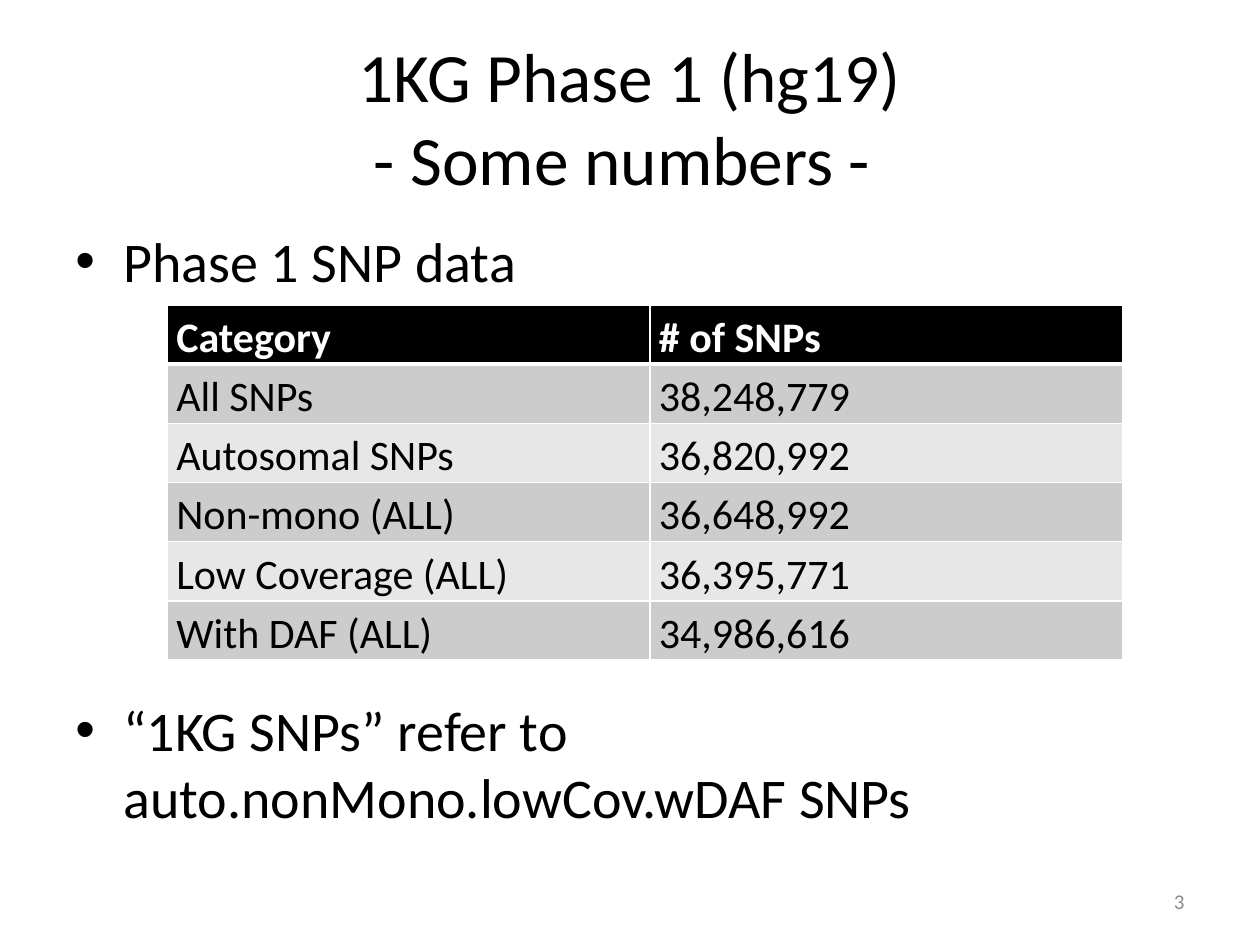
from lxml import etree
from pptx import Presentation
from pptx.dml.color import RGBColor
from pptx.enum.text import MSO_ANCHOR, MSO_AUTO_SIZE, PP_ALIGN
from pptx.oxml.ns import qn
from pptx.util import Inches, Pt

FONT = "Calibri"
SNP_ROWS = [
    ("Category", "# of SNPs"),
    ("All SNPs", "38,248,779"),
    ("Autosomal SNPs", "36,820,992"),
    ("Non-mono (ALL)", "36,648,992"),
    ("Low Coverage (ALL)", "36,395,771"),
    ("With DAF (ALL)", "34,986,616"),
]


def color(hex_value):
    return RGBColor.from_string(hex_value)


def add_run(paragraph, text, size, hex_value="000000", bold=False):
    run = paragraph.add_run()
    run.text = text
    run.font.name = FONT
    run.font.size = Pt(size)
    run.font.bold = bold
    run.font.color.rgb = color(hex_value)


def set_title(slide, lines):
    title = slide.shapes.title
    title.left, title.top = Inches(0.5), Inches(0.3)
    title.width, title.height = Inches(9), Inches(1.25)
    frame = title.text_frame
    frame.auto_size = MSO_AUTO_SIZE.NONE
    frame.vertical_anchor = MSO_ANCHOR.MIDDLE
    paragraph = frame.paragraphs[0]
    paragraph.alignment = PP_ALIGN.CENTER
    for index, line in enumerate(lines):
        if index:
            paragraph.add_line_break()
        add_run(paragraph, line, 39.6)


def add_text_frame(slide, left, top, width, height):
    box = slide.shapes.add_textbox(
        Inches(left), Inches(top), Inches(width), Inches(height))
    box.text_frame.word_wrap = True
    return box.text_frame


def add_bullet(paragraph, text, space_before=0):
    paragraph.space_before = Pt(space_before)
    properties = paragraph._p.get_or_add_pPr()
    properties.set("marL", str(Inches(0.38)))
    properties.set("indent", str(-Inches(0.38)))
    etree.SubElement(properties, qn("a:buFont"), typeface="Arial")
    etree.SubElement(properties, qn("a:buChar"), char="•")
    add_run(paragraph, text, 32)


def set_borders(cell, bottom_width):
    properties = cell._tc.get_or_add_tcPr()
    widths = {"lnL": 1, "lnR": 1, "lnT": 1, "lnB": bottom_width}
    # Borders come before the fill in the cell properties
    for position, (side, width) in enumerate(widths.items()):
        line = etree.Element(qn(f"a:{side}"), w=str(Pt(width)))
        fill = etree.SubElement(line, qn("a:solidFill"))
        etree.SubElement(fill, qn("a:srgbClr"), val="FFFFFF")
        properties.insert(position, line)


def fill_cell(cell, text, row_index):
    header = row_index == 0
    cell.margin_left = cell.margin_right = Inches(0.07)
    cell.margin_top = cell.margin_bottom = 0
    cell.fill.solid()
    band = "CCCCCC" if row_index % 2 else "E7E7E7"
    cell.fill.fore_color.rgb = color("000000" if header else band)
    paragraph = cell.text_frame.paragraphs[0]
    paragraph.line_spacing = 1.15
    add_run(paragraph, text, 24, "FFFFFF" if header else "000000", header)
    # The header rule is shared with the top of the first data row
    set_borders(cell, 3 if header else 1)


def add_snp_table(slide):
    row_height = 0.47
    table = slide.shapes.add_table(
        len(SNP_ROWS), 2, Inches(1.33), Inches(2.42),
        Inches(7.58), Inches(row_height * len(SNP_ROWS))).table
    table.columns[0].width = Inches(3.83)
    table.columns[1].width = Inches(3.75)
    for row_index, texts in enumerate(SNP_ROWS):
        table.rows[row_index].height = Inches(row_height)
        for column_index, text in enumerate(texts):
            fill_cell(table.cell(row_index, column_index), text, row_index)


def add_slide_number(slide, number):
    frame = add_text_frame(slide, 7.17, 6.95, 2.33, 0.4)
    frame.vertical_anchor = MSO_ANCHOR.MIDDLE
    paragraph = frame.paragraphs[0]
    paragraph.alignment = PP_ALIGN.RIGHT
    add_run(paragraph, number, 12, "8C8C8C")


def main():
    presentation = Presentation()
    presentation.slide_width = Inches(10)
    presentation.slide_height = Inches(7.5)
    slide = presentation.slides.add_slide(presentation.slide_layouts[5])

    set_title(slide, ["1KG Phase 1 (hg19)", "- Some numbers - "])

    # Bullets, with room for the table between them
    body = add_text_frame(slide, 0.5, 1.75, 9, 4.95)
    add_bullet(body.paragraphs[0], "Phase 1 SNP data")
    add_bullet(body.add_paragraph(),
               "“1KG SNPs” refer to auto.nonMono.lowCov.wDAF SNPs", 229.5)

    add_snp_table(slide)
    add_slide_number(slide, "3")
    presentation.save("out.pptx")


if __name__ == "__main__":
    main()
